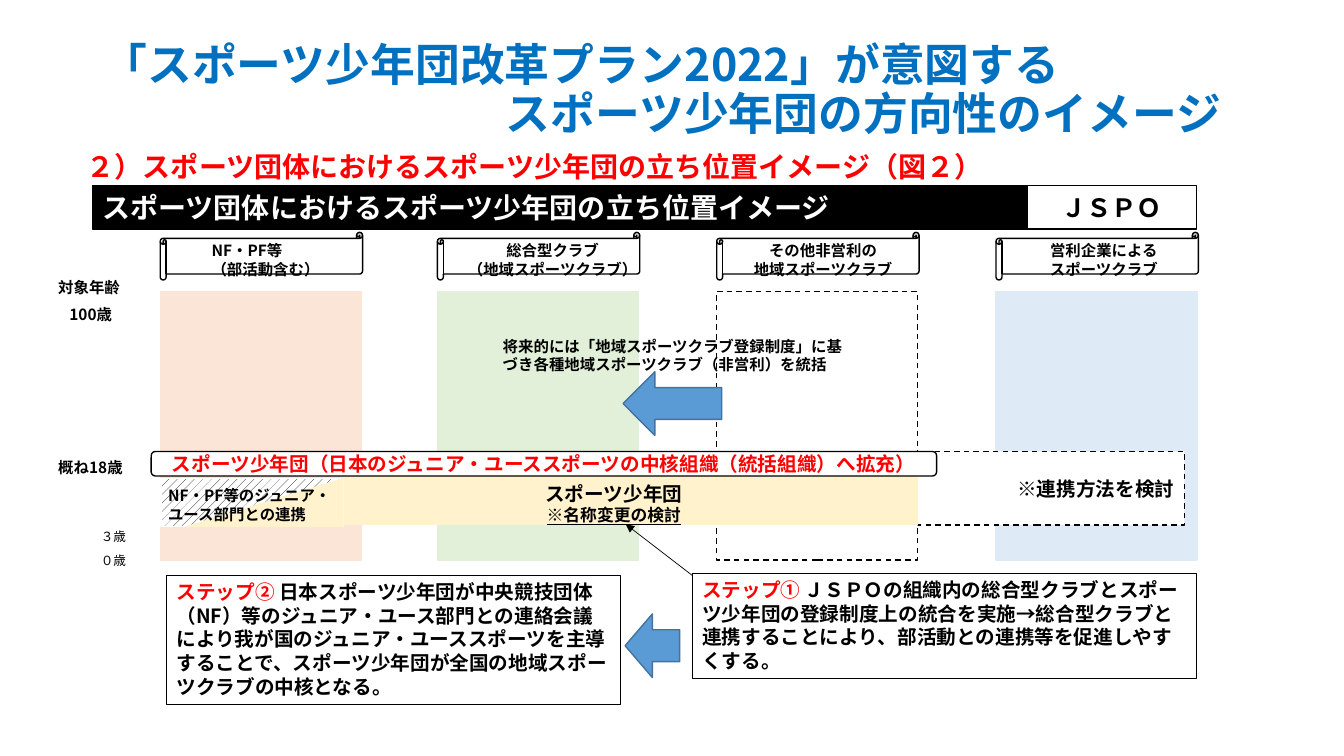
"""Build the slide on the position of junior sports clubs among sports bodies."""
import pptx
import pptx.dml.color
import pptx.enum.dml
import pptx.enum.shapes
import pptx.enum.text
import pptx.oxml.ns
import pptx.util
import lxml.etree

Pt = pptx.util.Pt
RGBColor = pptx.dml.color.RGBColor
SHAPE = pptx.enum.shapes.MSO_SHAPE
ALIGN = pptx.enum.text.PP_ALIGN
ANCHOR = pptx.enum.text.MSO_ANCHOR
qn = pptx.oxml.ns.qn

BLACK = RGBColor(0x00, 0x00, 0x00)
WHITE = RGBColor(0xFF, 0xFF, 0xFF)
RED = RGBColor(0xFF, 0x00, 0x00)
TITLE_BLUE = RGBColor(0x00, 0x70, 0xC0)
ARROW_BLUE = RGBColor(0x5B, 0x9B, 0xD5)
ARROW_EDGE = RGBColor(0x43, 0x73, 0x9E)
PEACH = RGBColor(0xFB, 0xE5, 0xD6)
GREEN = RGBColor(0xE2, 0xF0, 0xD9)
PALE_BLUE = RGBColor(0xDE, 0xEB, 0xF7)
CREAM = RGBColor(0xFF, 0xF2, 0xCC)

SCROLL_TOP, LABEL_TOP, COLUMN_TOP = 166, 169, 208
COLUMN_WIDTH, COLUMN_HEIGHT = 143.5, 192


class Page:
    """Hold the text style and the current slide."""

    font = "Noto Sans CJK JP"

    def __init__(self, deck):
        self.slide = deck.slides.add_slide(deck.slide_layouts[5])

    def style(self, para, size, color, bold=True):
        for span in para.runs:
            span.font.name = self.font
            span.font.size = Pt(size)
            span.font.bold = bold
            span.font.color.rgb = color
            latin = span.font._element.find(qn("a:latin"))
            east = lxml.etree.Element(qn("a:ea"), typeface=self.font)
            latin.addnext(east)

    def set_text(self, box, text, size, color=BLACK, align=ALIGN.LEFT,
                 anchor=ANCHOR.TOP, bold=True):
        frame = box.text_frame
        frame.word_wrap = True
        frame.vertical_anchor = anchor
        frame.text = text
        for para in frame.paragraphs:
            para.alignment = align
            self.style(para, size, color, bold)
        return frame

    def title(self, text, left, top, width, height, indent):
        box = self.slide.shapes.title
        box.left, box.top, box.width, box.height = map(Pt, (left, top, width, height))
        frame = self.set_text(box, text, 32, TITLE_BLUE, anchor=ANCHOR.MIDDLE)
        for para in frame.paragraphs:
            para.line_spacing = 0.9
        frame.paragraphs[1]._p.get_or_add_pPr().set("marL", str(Pt(indent)))

    def label(self, text, left, top, width, height, size=11, **look):
        box = self.slide.shapes.add_textbox(*map(Pt, (left, top, width, height)))
        return self.set_text(box, text, size, **look)

    def shape(self, kind, left, top, width, height, fill=None, line=BLACK,
              weight=1, dashed=False):
        box = self.slide.shapes.add_shape(kind, *map(Pt, (left, top, width, height)))
        box.shadow.inherit = False
        if fill is None:
            box.fill.background()
        else:
            box.fill.solid()
            box.fill.fore_color.rgb = fill
        box.line.color.rgb = line
        box.line.width = Pt(weight)
        if dashed:
            box.line.dash_style = pptx.enum.dml.MSO_LINE.DASH
        return box

    def banner(self, text, size, color, align, *place, kind=SHAPE.RECTANGLE, **look):
        box = self.shape(kind, *place, **look)
        self.set_text(box, text, size, color, align, ANCHOR.MIDDLE)

    def column(self, text, left, label_left, label_width, fill, dashed=False,
               align=ALIGN.CENTER):
        self.shape(SHAPE.HORIZONTAL_SCROLL, left, SCROLL_TOP, 144.5, 34, WHITE)
        self.label(text, label_left, LABEL_TOP, label_width, 34, align=align)
        self.shape(SHAPE.RECTANGLE, left, COLUMN_TOP, COLUMN_WIDTH, COLUMN_HEIGHT,
                   fill, BLACK if dashed else fill, dashed=dashed)

    def hatch(self, left, top, width, height):
        box = self.shape(SHAPE.RECTANGLE, left, top, width, height, line=WHITE)
        box.fill.patterned()
        box.fill.pattern = pptx.enum.dml.MSO_PATTERN.PERCENT_20
        box.fill.fore_color.rgb = BLACK
        box.fill.back_color.rgb = WHITE

    def step(self, heading, text, *place):
        box = self.shape(SHAPE.RECTANGLE, *place, weight=0.75)
        para = self.set_text(box, heading, 14).paragraphs[0]
        added = para.add_run()
        added.text = text
        for span in para.runs[:1]:
            span.font._element.remove(span.font._element.find(qn("a:ea")))
        self.style(para, 14, BLACK)
        para.runs[0].font.color.rgb = RED

    def arrow(self, left, top, width, height):
        self.shape(SHAPE.LEFT_ARROW, left, top, width, height, ARROW_BLUE, ARROW_EDGE)

    def pointer(self, *ends):
        line = self.slide.shapes.add_connector(
            pptx.enum.shapes.MSO_CONNECTOR.STRAIGHT, *map(Pt, ends))
        line.line.color.rgb = BLACK
        line.line.width = Pt(0.5)
        edge = line._element.spPr.find(qn("a:ln"))
        lxml.etree.SubElement(edge, qn("a:tailEnd"), type="triangle")
        lxml.etree.SubElement(line._element.spPr, qn("a:effectLst"))


def main():
    deck = pptx.Presentation()
    deck.slide_width, deck.slide_height = Pt(960), Pt(540)
    page = Page(deck)

    page.title("「スポーツ少年団改革プラン2022」が意図する\nスポーツ少年団の方向性のイメージ",
               66, 28.5, 828, 74, indent=288)
    page.label("２）スポーツ団体におけるスポーツ少年団の立ち位置イメージ（図２）",
               55, 103, 667, 32, 20, color=RED)
    page.banner("スポーツ団体におけるスポーツ少年団の立ち位置イメージ", 20, WHITE, ALIGN.LEFT,
                66, 132.5, 707, 31, fill=BLACK)
    page.banner("ＪＳＰＯ", 18, BLACK, ALIGN.CENTER, 733.5, 132.5, 121, 31, fill=WHITE)

    page.column("営利企業による\nスポーツクラブ", 711.5, 739.5, 98, PALE_BLUE)
    page.banner("※連携方法を検討", 14, BLACK, ALIGN.RIGHT,
                637, 322.5, 209, 52.5, fill=WHITE, dashed=True)
    page.column("NF・PF等\n（部活動含む）", 114.5, 144, 101.5, PEACH, align=ALIGN.LEFT)
    page.column("総合型クラブ\n（地域スポーツクラブ）", 312.5, 324.5, 140.5, GREEN)
    page.column("その他非営利の\n地域スポーツクラブ", 512, 530, 116, WHITE, dashed=True)

    page.shape(SHAPE.RECTANGLE, 244, 340, 411, 34.5, CREAM, CREAM)
    club = page.label("スポーツ少年団\n※名称変更の検討", 366.5, 340.5, 144, 39, 14,
                      align=ALIGN.CENTER)
    rename = club.paragraphs[1].runs[0].font
    rename.size, rename.underline = Pt(12), True
    page.banner("スポーツ少年団（日本のジュニア・ユーススポーツの中核組織（統括組織）へ拡充）",
                14, RED, ALIGN.CENTER, 108, 322.5, 561, 17.5,
                kind=SHAPE.ROUNDED_RECTANGLE, fill=WHITE)
    page.hatch(115, 342, 130, 34)
    wedge = page.shape(SHAPE.RIGHT_TRIANGLE, 134, 342, 111, 34, CREAM, CREAM)
    wedge._element.spPr.find(qn("a:xfrm")).set("flipH", "1")
    page.label("NF・PF等のジュニア・ユース部門との連携", 113, 344, 143.5, 34)

    page.label("対象年齢", 34.5, 195, 66, 21)
    page.label("100歳", 42.5, 214.5, 50.5, 21)
    page.label("概ね18歳", 34.5, 324, 63.5, 21)
    for age, top in (("３歳", 374.5), ("０歳", 391.5)):
        page.label(age, 65, top, 33, 18, 9, bold=False)

    page.arrow(445, 265.5, 70.5, 45.5)
    page.label("将来的には「地域スポーツクラブ登録制度」に基づき各種地域スポーツクラブ（非営利）を統括",
               352, 237, 267, 34)
    page.step("ステップ① ",
              "ＪＳＰＯの組織内の総合型クラブとスポーツ少年団の登録制度上の統合を実施→"
              "総合型クラブと連携することにより、部活動との連携等を促進しやすくする。",
              494.5, 409.5, 360, 75)
    page.step("ステップ② ",
              "日本スポーツ少年団が中央競技団体（NF）等のジュニア・ユース部門との連絡会議により"
              "我が国のジュニア・ユーススポーツを主導することで、"
              "スポーツ少年団が全国の地域スポーツクラブの中核となる。",
              119, 411, 324.5, 92)
    page.arrow(446.5, 438.5, 39, 45.5)
    page.pointer(494.5, 411, 447, 374.5)

    deck.save("out.pptx")


if __name__ == "__main__":
    main()
